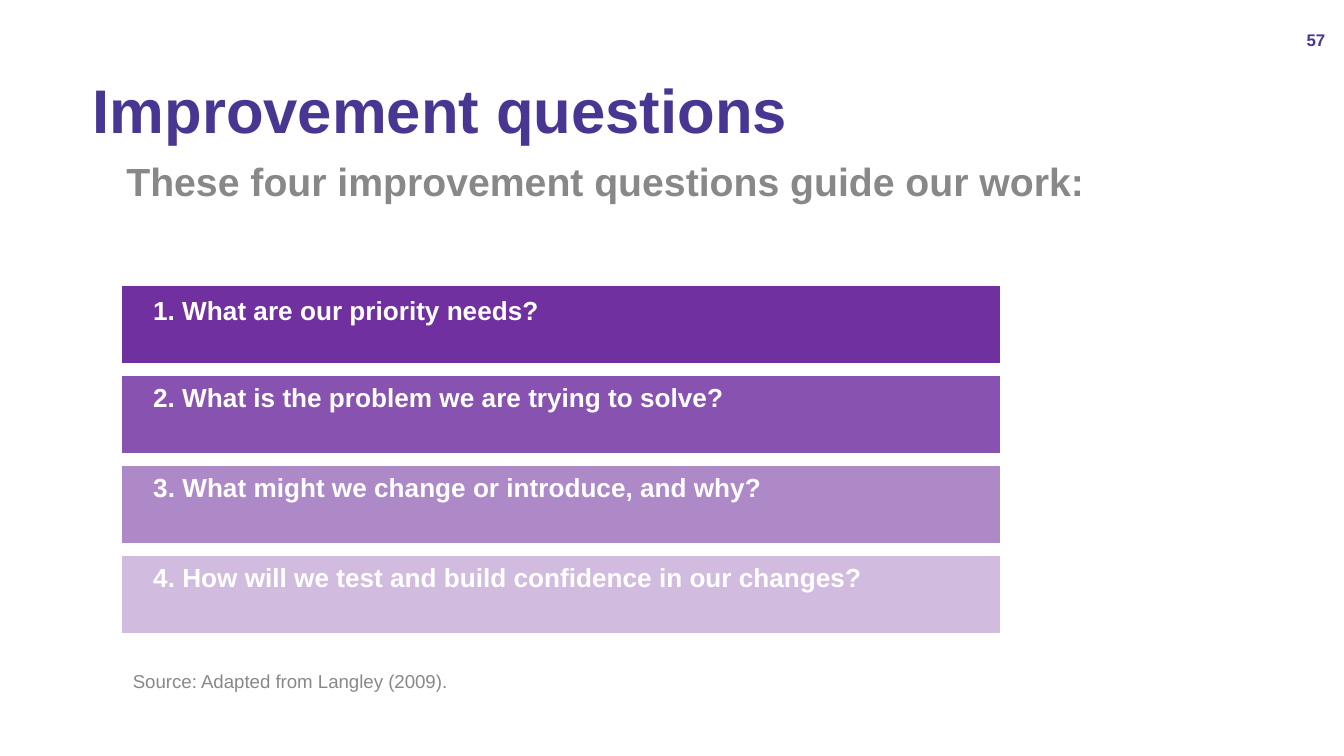
from lxml import etree
from pptx import Presentation
from pptx import util as u
from pptx.dml.color import RGBColor
from pptx.enum import shapes, text
from pptx.oxml.ns import qn

PX = 4572
INDIGO = RGBColor(0x48, 0x36, 0x92)
PURPLE = RGBColor(0x70, 0x30, 0xA0)
GRAY = RGBColor(0x88, 0x88, 0x88)
WHITE = RGBColor(0xFF, 0xFF, 0xFF)

ROWS = [
    ("1. What are our priority needs?", 100, 13, 1028),
    ("2. What is the problem we are trying to solve?", 83, 8, 1028),
    ("3. What might we change or introduce, and why?", 57, 8, 1258),
    ("4. How will we test and build confidence in our changes?", 32, 8, 1238),
]
LEFT, TOP, STEP = 178, 423, 134


class Deck:
    font = "Arial"
    inset = (0, 8, 14, 8)

    def __init__(self, wide, high):
        self.prs = Presentation()
        self.prs.slide_width = u.Emu(wide * PX)
        self.prs.slide_height = u.Emu(high * PX)
        self.slide = self.prs.slides.add_slide(self.prs.slide_layouts[6])

    def place(self, box):
        return [u.Emu(n * PX) for n in box]

    def bar(self, box, color, alpha):
        bar = self.slide.shapes.add_shape(
            shapes.MSO_SHAPE.RECTANGLE, *self.place(box))
        bar.shadow.inherit = False
        bar.fill.solid()
        bar.fill.fore_color.rgb = color
        bar.line.color.rgb = WHITE
        bar.line.width = u.Pt(2)
        if alpha < 100:
            tint = bar.fill._xPr.find(qn("a:solidFill"))[0]
            etree.SubElement(tint, qn("a:alpha"), val=str(alpha * 1000))

    def label(self, box, words, size, color, bold=True, indent=0, lead=0.9,
              inset=inset, anchor=text.MSO_ANCHOR.TOP,
              align=text.PP_ALIGN.LEFT):
        frame = self.slide.shapes.add_textbox(*self.place(box)).text_frame
        frame.word_wrap = True
        frame.vertical_anchor = anchor
        (frame.margin_left, frame.margin_top,
         frame.margin_right, frame.margin_bottom) = self.place(inset)
        frame.text = words
        para = frame.paragraphs[0]
        para.alignment = align
        para.line_spacing = lead
        if indent:
            props = para._p.get_or_add_pPr()
            props.set("marL", str(indent * PX))
            props.set("indent", "0")
        font = para.runs[0].font
        font.name = self.font
        font.size = u.Pt(size)
        font.bold = bold
        font.color.rgb = color


def main():
    deck = Deck(2000, 1125)
    deck.label((138, 60, 1724, 218), "Improvement questions", 33, INDIGO,
               anchor=text.MSO_ANCHOR.MIDDLE)
    deck.label((138, 234, 1724, 714),
               "These four improvement questions guide our work:", 21, GRAY,
               indent=50)
    for i, (words, alpha, drop, wide) in enumerate(ROWS):
        top = TOP + i * STEP
        deck.bar((LEFT, top, 1313, 120), PURPLE, alpha)
        deck.label((LEFT, top + drop, wide, 86), words, 14, WHITE, indent=50)
    deck.label((1902, 30, 84, 60), "57", 9, INDIGO, lead=1.0,
               inset=(14, 8, 14, 8), anchor=text.MSO_ANCHOR.MIDDLE,
               align=text.PP_ALIGN.RIGHT)
    deck.label((LEFT, 978, 1166, 126), "Source: Adapted from Langley (2009).",
               10, GRAY, bold=False, lead=1.0, inset=(20, 24, 20, 20))
    deck.prs.save("out.pptx")


if __name__ == "__main__":
    main()
